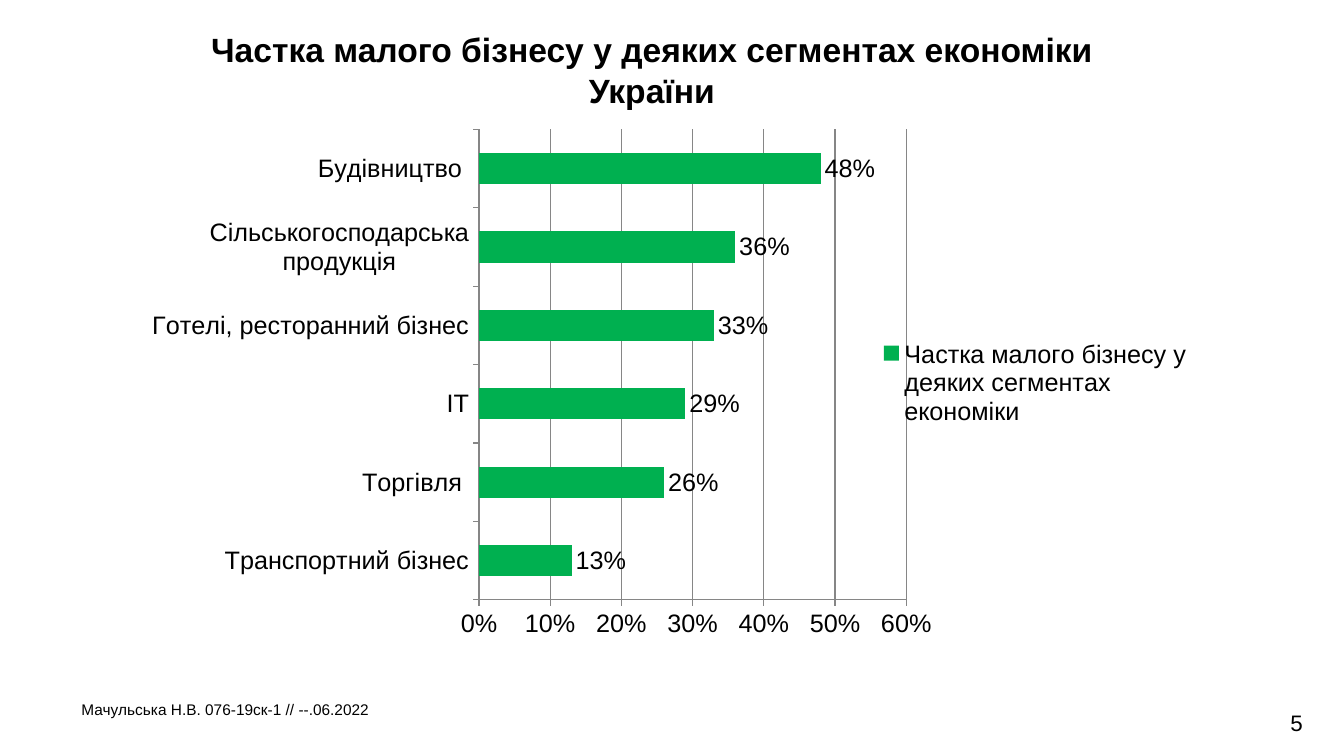
from lxml import etree
from pptx import Presentation
from pptx import util as u
from pptx.chart.data import CategoryChartData
from pptx.dml.color import RGBColor
from pptx.enum import chart as ch, text
from pptx.oxml.ns import qn

COLORS = {"text": "000000", "bar": "00B050", "grid": "868686", "back": "FFFFFF"}
FONT = "Arial"
W, H = 13.33, 7.5
SHARES = {
    "Транспортний бізнес": 0.13,
    "Торгівля ": 0.26,
    "ІТ": 0.29,
    "Готелі, ресторанний бізнес": 0.33,
    "Сільськогосподарська продукція": 0.36,
    "Будівництво ": 0.48,
}
PLOT = {"x": 0.324, "y": 0.029, "w": 0.399, "h": 0.874}


def rgb(name):
    """Return a named colour of the palette."""
    return RGBColor.from_string(COLORS[name])


def inches(box):
    """Turn a box of inches into lengths."""
    return [u.Inches(v) for v in box]


def style(font, size, bold=False):
    """Format a font in the slide's typeface and text colour."""
    font.name, font.size, font.bold = FONT, u.Pt(size), bold
    font.color.rgb = rgb("text")


def write(sp, content, size, bold=False, align=text.PP_ALIGN.LEFT,
          anchor=text.MSO_ANCHOR.TOP, spacing=1.0):
    """Fill a shape with one formatted paragraph."""
    tf = sp.text_frame
    tf.word_wrap = True
    tf.auto_size = text.MSO_AUTO_SIZE.NONE
    tf.vertical_anchor = anchor
    p = tf.paragraphs[0]
    p.alignment, p.line_spacing, p.space_before = align, spacing, u.Pt(0)
    r = p.add_run()
    r.text = content
    style(r.font, size, bold)


def add_title(s, box):
    """Place the slide title in its placeholder."""
    sp = s.shapes.title
    sp.left, sp.top, sp.width, sp.height = inches(box)
    write(sp, "Частка малого бізнесу у деяких сегментах економіки України",
          24, bold=True, align=text.PP_ALIGN.CENTER)


def add_footer(s, box):
    """Place the author line and the page number along a bottom band."""
    x, y, w, h = box
    author = s.shapes.add_textbox(*inches((x, y, w * 0.87, h * 0.6)))
    write(author, "Мачульська Н.В. 076-19ск-1 // --.06.2022", 11,
          anchor=text.MSO_ANCHOR.MIDDLE, spacing=0.9)
    page = s.shapes.add_textbox(*inches((x + w - 0.64, y + 0.07, 0.64, 0.37)))
    write(page, "5", 16, align=text.PP_ALIGN.CENTER)


def fix_plot(chart):
    """Set the inner plot area to fixed shares of the chart."""
    area = chart.plots[0]._element.getparent()
    layout = area.find(qn("c:layout"))
    if layout is None:
        layout = etree.Element(qn("c:layout"))
        area.insert(0, layout)
    manual = etree.SubElement(layout, qn("c:manualLayout"))
    values = {"layoutTarget": "inner", "xMode": "edge", "yMode": "edge", **PLOT}
    for tag, value in values.items():
        etree.SubElement(manual, qn("c:" + tag)).set("val", str(value))


def add_share_chart(s, box):
    """Place the bar chart of small-business shares."""
    data = CategoryChartData(number_format="0%")
    data.categories = list(SHARES)
    data.add_series("Частка малого бізнесу у деяких сегментах економіки",
                    list(SHARES.values()))
    chart = s.shapes.add_chart(ch.XL_CHART_TYPE.BAR_CLUSTERED,
                               *inches(box), data).chart
    style(chart.font, 18)
    chart.has_title = False
    chart.has_legend = True
    chart.legend.position = ch.XL_LEGEND_POSITION.RIGHT
    chart.legend.include_in_layout = False

    plot = chart.plots[0]
    plot.gap_width, plot.vary_by_categories = 150, False
    fill = plot.series[0].format.fill
    fill.solid()
    fill.fore_color.rgb = rgb("bar")
    plot.has_data_labels = True
    labels = plot.data_labels
    labels.show_value = True
    labels.number_format, labels.number_format_is_linked = "0%", False
    labels.position = ch.XL_LABEL_POSITION.OUTSIDE_END

    values = chart.value_axis
    values.minimum_scale, values.maximum_scale, values.major_unit = 0, 0.6, 0.1
    values.has_major_gridlines = True
    values.tick_labels.number_format = "0%"
    values.tick_labels.number_format_is_linked = False
    for axis in (chart.category_axis, values):
        axis.major_tick_mark = ch.XL_TICK_MARK.OUTSIDE
    for part in (chart.category_axis, values, values.major_gridlines):
        part.format.line.color.rgb = rgb("grid")
        part.format.line.width = u.Pt(0.75)
    fix_plot(chart)


def main():
    """Build and save the slide."""
    prs = Presentation()
    prs.slide_width, prs.slide_height = inches((W, H))
    s = prs.slides.add_slide(prs.slide_layouts[5])
    s.background.fill.solid()
    s.background.fill.fore_color.rgb = rgb("back")
    add_footer(s, (0.71, 6.92, 12.47, 0.44))
    add_title(s, (1.8, 0.24, W * 0.7, 0.91))
    add_share_chart(s, (1.31, 1.13, 10.62, 5.34))
    prs.save("out.pptx")


if __name__ == "__main__":
    main()
